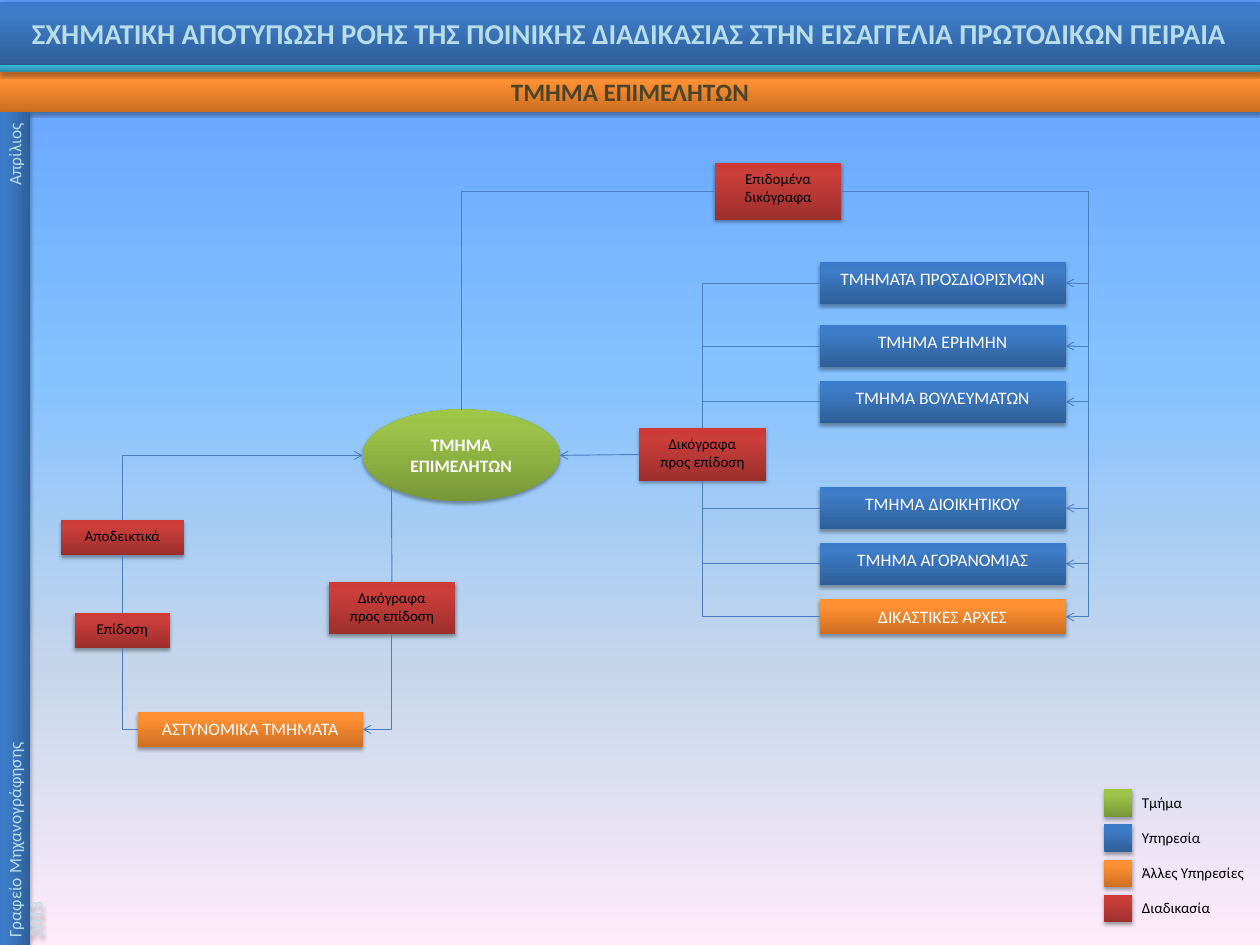
from lxml.etree import SubElement
from pptx import Presentation
from pptx.dml.color import RGBColor
from pptx.enum.shapes import MSO_CONNECTOR as LINE, MSO_SHAPE as SHAPE
from pptx.enum.text import MSO_ANCHOR as ANCHOR, PP_ALIGN as ALIGN
from pptx.oxml.ns import qn
from pptx.util import Inches, Pt

# Content: colours
SKY = [(0, "5E9EFF"), (40, "85C2FF"), (70, "C4D6EB"), (100, "FFEBFA")]
GREEN = [(0, "779737"), (80, "9BC348"), (100, "9DC746")]
BLUE = [(0, "2F5F99"), (80, "3D7CC7"), (100, "3A7CCB")]
ORANGE = [(0, "CC6E20"), (80, "FF9034"), (100, "FF9136")]
RED = [(0, "9C2F2D"), (80, "CB3E3A"), (100, "CE3B37")]
TEAL = [(0, "2A88A2"), (80, "37B1D2"), (100, "34B4D6")]
WHITE, BLACK, PALE, BROWN, WIRE = "FFFFFF", "000000", "B7DEE8", "4A452A", "4B7EBC"

# Content: words and places
TITLE = ("ΣΧΗΜΑΤΙΚΗ ΑΠΟΤΥΠΩΣΗ ΡΟΗΣ ΤΗΣ ΠΟΙΝΙΚΗΣ ΔΙΑΔΙΚΑΣΙΑΣ "
         "ΣΤΗΝ ΕΙΣΑΓΓΕΛΙΑ ΠΡΩΤΟΔΙΚΩΝ ΠΕΙΡΑΙΑ")
UNIT = "ΤΜΗΜΑ ΕΠΙΜΕΛΗΤΩΝ"
SIDE = "Γραφείο Μηχανογράφησης\tΑπρίλιος\n2013"
DEPTS = [  # text, top, height, colour, side of the writs box it joins
    ("ΤΜΗΜΑΤΑ ΠΡΟΣΔΙΟΡΙΣΜΩΝ", 2.91, 0.47, BLUE, 0),
    ("ΤΜΗΜΑ ΕΡΗΜΗΝ", 3.61, 0.47, BLUE, 0),
    ("ΤΜΗΜΑ ΒΟΥΛΕΥΜΑΤΩΝ", 4.23, 0.47, BLUE, 0),
    ("ΤΜΗΜΑ ΔΙΟΙΚΗΤΙΚΟΥ", 5.41, 0.47, BLUE, 2),
    ("ΤΜΗΜΑ ΑΓΟΡΑΝΟΜΙΑΣ", 6.03, 0.47, BLUE, 2),
    ("ΔΙΚΑΣΤΙΚΕΣ ΑΡΧΕΣ", 6.66, 0.39, ORANGE, 2),
]
STEPS = {
    "writs": ("Δικόγραφα\nπρος επίδοση", (7.1, 4.76, 1.41, 0.58)),
    "served": ("Επιδομένα\nδικόγραφα", (7.94, 1.81, 1.41, 0.63)),
    "sent": ("Δικόγραφα\nπρος επίδοση", (3.65, 6.47, 1.41, 0.58)),
    "serve": ("Επίδοση", (0.83, 6.81, 1.06, 0.39)),
    "proof": ("Αποδεικτικά", (0.68, 5.78, 1.36, 0.39)),
}
LEGEND = [("Τμήμα", GREEN), ("Υπηρεσία", BLUE),
          ("Άλλες Υπηρεσίες", ORANGE), ("Διαδικασία", RED)]
TOP, LEFT, BOTTOM, RIGHT = range(4)

deck = Presentation()
deck.slide_width, deck.slide_height = Inches(14), Inches(10.5)
slide = deck.slides.add_slide(deck.slide_layouts[6])
shapes = slide.shapes


def rgb(code):
    return RGBColor.from_string(code)


def node(parent, tag, **attrs):
    return SubElement(parent, qn("a:" + tag), {k: str(v) for k, v in attrs.items()})


def blend(fill, root, stops, angle):
    fill.gradient()
    grad = next(root.iter(qn("a:gradFill")))
    for child in list(grad):
        grad.remove(child)
    group = node(grad, "gsLst")
    for pos, code in stops:
        node(node(group, "gs", pos=pos * 1000), "srgbClr", val=code)
    node(grad, "lin", ang=angle * 60000, scaled=0)


def write(shape, text, size, color, bold=False, align=ALIGN.CENTER,
          inset=(0.1, 0.05), anchor=ANCHOR.TOP):
    frame = shape.text_frame
    frame.text = text
    frame.word_wrap, frame.vertical_anchor = True, anchor
    frame.margin_left = frame.margin_right = Inches(inset[0])
    frame.margin_top = frame.margin_bottom = Inches(inset[1])
    for para in frame.paragraphs:
        para.alignment = align
        for run in para.runs:
            font = run.font
            font.name, font.size, font.bold = "Calibri", Pt(size), bold
            font.color.rgb = rgb(color)


def block(place, stops, kind=SHAPE.RECTANGLE):
    shape = shapes.add_shape(kind, *map(Inches, place))
    shape.line.fill.background()
    blend(shape.fill, shape._element.spPr, stops, 270)
    shape.shadow.inherit = False
    effects = shape._element.spPr.find(qn("a:effectLst"))
    shade = node(effects, "outerShdw", blurRad=Pt(3.1), dist=Pt(1.8),
                 dir=5400000, rotWithShape=0)
    node(node(shade, "srgbClr", val=BLACK), "alpha", val=35000)
    return shape


def box(text, place, stops, size, color):
    shape = block(place, stops)
    write(shape, text, size, color, inset=(0.14, 0.07))
    return shape


def wire(start, end, kind="line", arrow=None):
    """Join (shape, side) pairs; a corner leaves its start sideways."""
    style = LINE.STRAIGHT if kind == "line" else LINE.ELBOW
    link = shapes.add_connector(style, 0, 0, 0, 0)
    for (shape, side), join, tag in ((start, link.begin_connect, "a:stCxn"),
                                     (end, link.end_connect, "a:endCxn")):
        join(shape, side)
        if shape is unit:  # an ellipse has eight sites
            next(link._element.iter(qn(tag))).set("idx", str(side * 2))
    finish(link, arrow)
    geom = link._element.spPr.find(qn("a:prstGeom"))
    if kind == "corner":
        geom.set("prst", "bentConnector2")
    elif kind == "loop":
        node(geom.find(qn("a:avLst")), "gd", name="adj1", fmla="val 110000")


def finish(link, arrow=None):
    link.line.color.rgb, link.line.width = rgb(WIRE), Pt(0.75)
    if arrow:
        node(link.line._get_or_add_ln(), arrow, type="arrow")
    node(link._element.spPr, "effectLst")


# Background, unit and boxes
blend(slide.background.fill, slide._element, SKY, 90)
unit = block((4.03, 4.55, 2.19, 1.02), GREEN, SHAPE.OVAL)
write(unit, UNIT, 14, WHITE, bold=True, anchor=ANCHOR.MIDDLE)
depts = [(box(text, (9.11, top, 2.73, high), stops, 14, WHITE), side)
         for text, top, high, stops, side in DEPTS]
police = box("ΑΣΤΥΝΟΜΙΚΑ ΤΜΗΜΑΤΑ", (1.53, 7.91, 2.5, 0.39), ORANGE, 14, WHITE)
step = {key: box(text, place, RED, 12, BLACK)
        for key, (text, place) in STEPS.items()}

# Flow lines
for dept, side in depts:
    wire((dept, LEFT), (step["writs"], side), "corner")
    wire((step["served"], RIGHT), (dept, RIGHT), "loop", "tailEnd")
wire((step["writs"], LEFT), (unit, RIGHT), arrow="tailEnd")
wire((step["served"], LEFT), (unit, TOP), "corner")
wire((police, RIGHT), (step["sent"], BOTTOM), "corner", "headEnd")
wire((police, LEFT), (step["serve"], BOTTOM), "corner")
wire((step["proof"], BOTTOM), (step["serve"], TOP))
wire((unit, LEFT), (step["proof"], TOP), "corner", "headEnd")
drop = shapes.add_connector(LINE.STRAIGHT, Inches(4.35), Inches(5.41), 0, 0)
drop.end_connect(step["sent"], TOP)
finish(drop)

# Legend
for i, (text, stops) in enumerate(LEGEND):
    top = 8.77 + i * 0.39
    block((12.27, top, 0.31, 0.31), stops)
    label = shapes.add_textbox(*map(Inches, (12.59, top, 1.4, 0.3)))
    write(label, text, 12, BLACK, align=ALIGN.LEFT)

# Header bands and side bar
band = block((0, 0.8, 14, 0.44), ORANGE)
write(band, UNIT, 20, BROWN, bold=True)
head = block((0, 0.02, 14, 0.7), BLUE)
write(head, TITLE, 23, PALE, bold=True, inset=(0.14, 0.07), anchor=ANCHOR.MIDDLE)
bar = block((-4.47, 5.71, 9.27, 0.34), BLUE)
bar.rotation = 270
write(bar, SIDE, 14, PALE, align=ALIGN.LEFT)
props = bar.text_frame.paragraphs[0]._p.get_or_add_pPr()
node(node(props, "tabLst"), "tab", pos=Inches(9.05), algn="r")
block((0, 0.72, 14, 0.08), TEAL)

deck.save("out.pptx")
